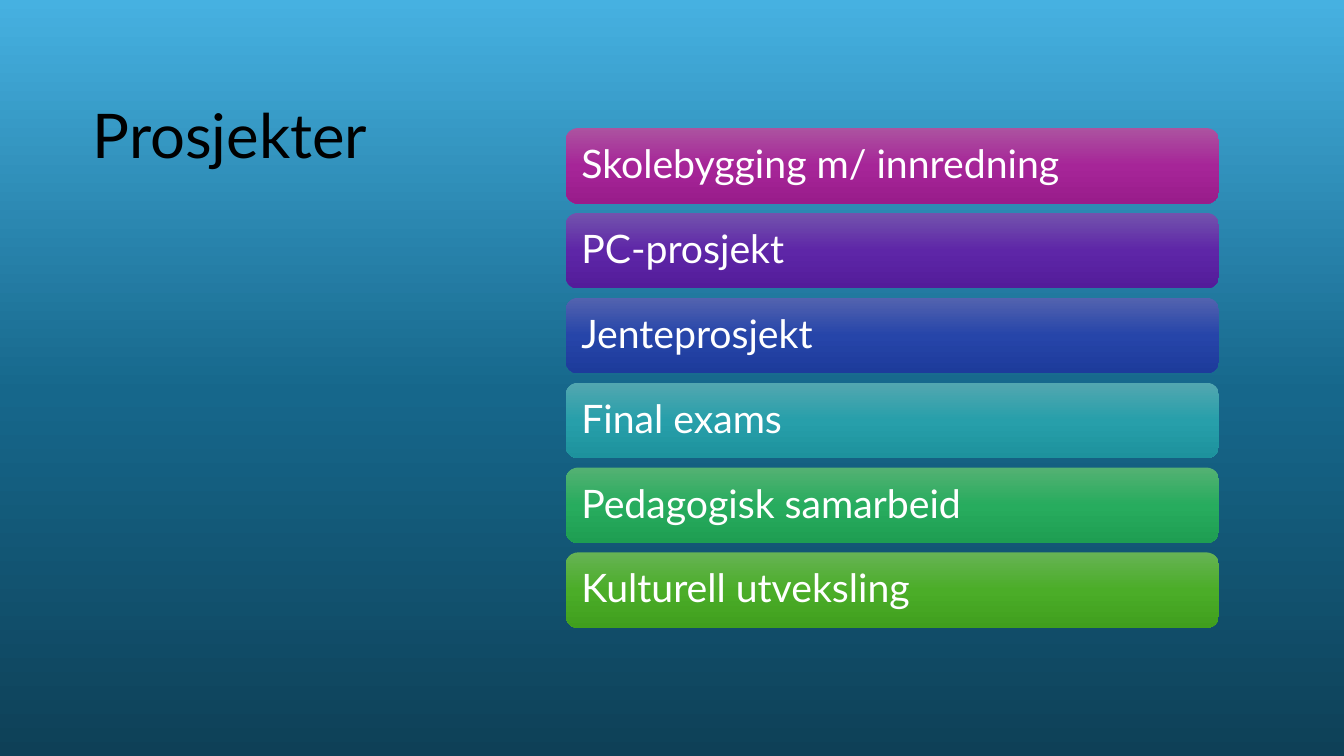
from lxml import etree
from pptx import Presentation
from pptx.dml.color import RGBColor
from pptx.enum.shapes import MSO_SHAPE
from pptx.enum.text import MSO_ANCHOR, PP_ALIGN
from pptx.oxml.ns import qn
from pptx.util import Inches, Pt

ROUNDED = MSO_SHAPE.ROUNDED_RECTANGLE
MIDDLE = MSO_ANCHOR.MIDDLE
LEFT = PP_ALIGN.LEFT

PROJECTS = [
    ("Skolebygging m/ innredning", ("AC53A0", "A62598", "991C8B")),
    ("PC-prosjekt", ("7353AD", "5E26A7", "531C9A")),
    ("Jenteprosjekt", ("5363AF", "2645A9", "1D3B9B")),
    ("Final exams", ("53A7B0", "279FAA", "1D929D")),
    ("Pedagogisk samarbeid", ("54B173", "27AC5E", "1E9E52")),
    ("Kulturell utveksling", ("66B354", "4BAD28", "409F1E")),
]


def fill_gradient(owner, fill, colors, middle):
    """Fill from top to bottom with three colours, the second at middle percent."""
    fill.gradient()
    fill.gradient_angle = 270
    stops = owner.element.find(".//" + qn("a:gsLst"))
    stops.clear()
    for position, color in zip((0, middle, 100), colors):
        stop = etree.SubElement(stops, qn("a:gs"), pos=str(position * 1000))
        etree.SubElement(stop, qn("a:srgbClr"), val=color)


def write_text(sp, text, size, color, inset):
    tf = sp.text_frame
    tf.word_wrap = True
    tf.vertical_anchor = MIDDLE
    tf.margin_left = tf.margin_right = Inches(inset)
    p = tf.paragraphs[0]
    p.alignment = LEFT
    p.line_spacing = 0.9
    r = p.add_run()
    r.text = text
    r.font.name = "Lato"
    r.font.size = Pt(size)
    r.font.color.rgb = RGBColor.from_string(color)


prs = Presentation()
prs.slide_width, prs.slide_height = Inches(13.33), Inches(7.5)
s = prs.slides.add_slide(prs.slide_layouts[6])
fill_gradient(s, s.background.fill, ("46B1E1", "16678B", "0E4057"), 52)

title = s.shapes.add_textbox(Inches(0.82), Inches(0.67), Inches(3.98), Inches(1.41))
write_text(title, "Prosjekter", 44, "000000", 0.1)

for i, (name, colors) in enumerate(PROJECTS):
    bar = s.shapes.add_shape(
        ROUNDED, Inches(5.61), Inches(1.27 + 0.842 * i), Inches(6.48), Inches(0.75)
    )
    bar.shadow.inherit = False
    bar.line.fill.background()
    fill_gradient(bar, bar.fill, colors, 50)
    write_text(bar, name, 28, "FFFFFF", 0.12)

prs.save("out.pptx")
